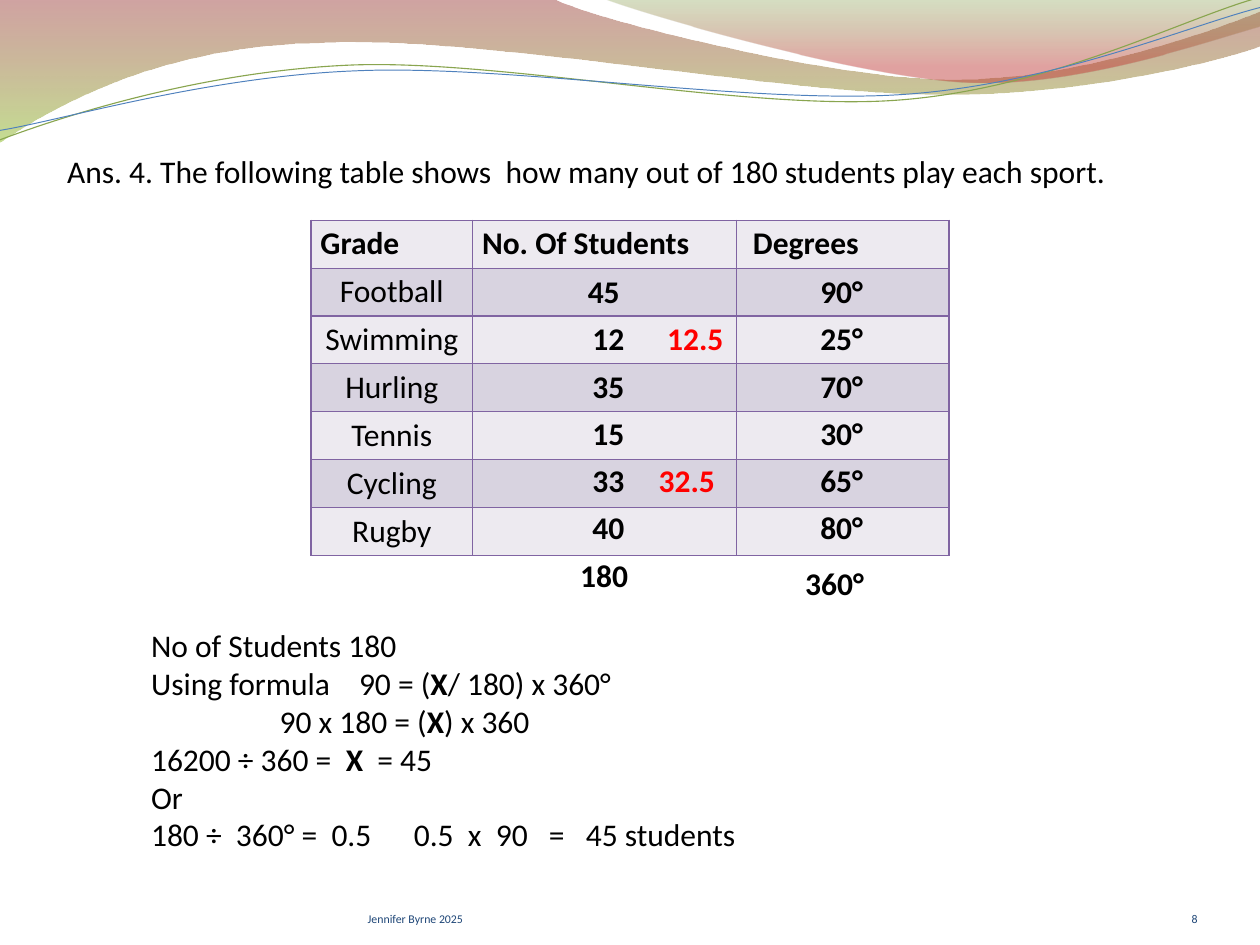
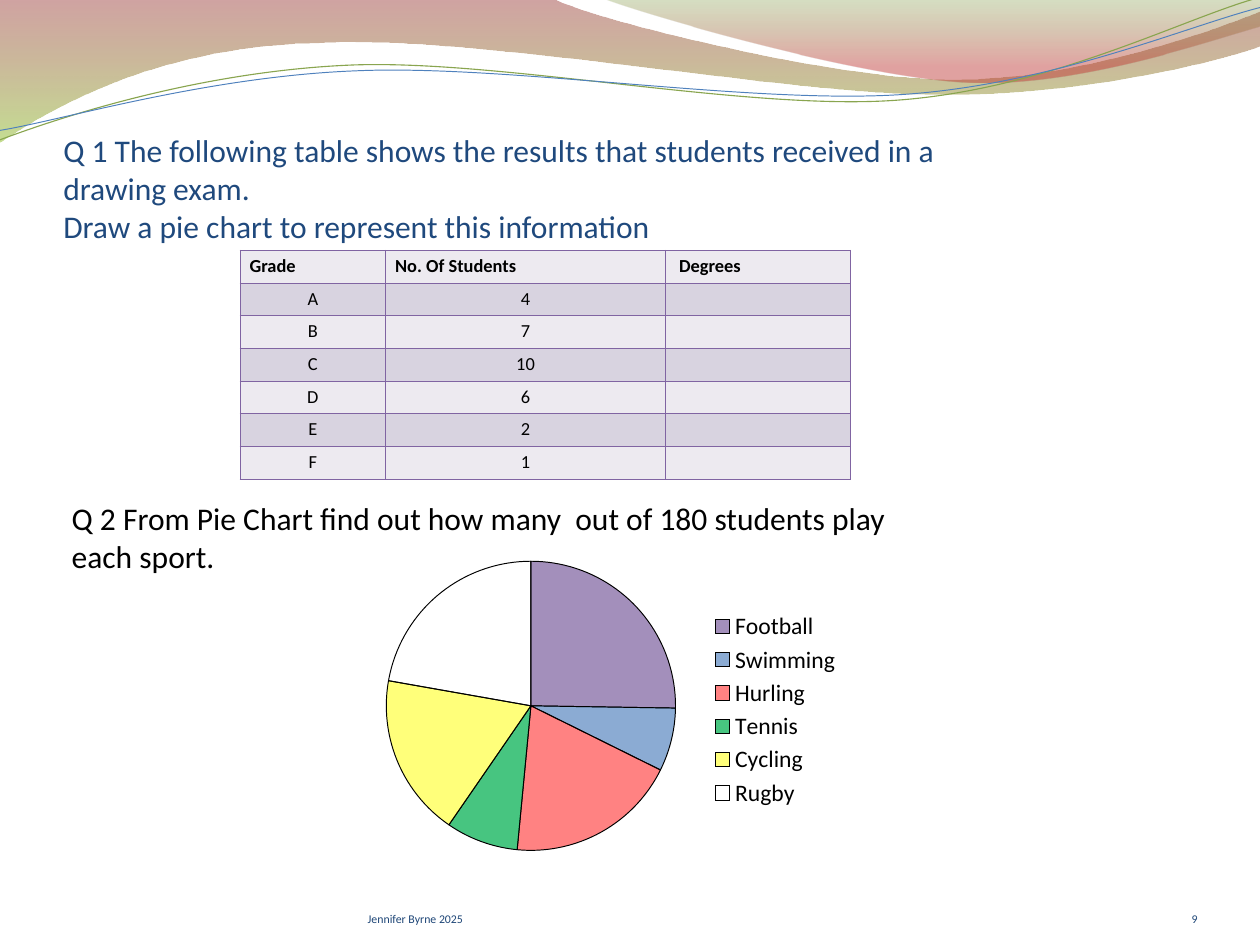
from dataclasses import dataclass

from lxml import etree
from pptx import Presentation
from pptx import util as u
from pptx.chart.data import CategoryChartData
from pptx.dml.color import RGBColor
from pptx.enum import chart as ch, text as tx
from pptx.oxml import ns


@dataclass(frozen=True)
class Theme:
    font: str = "Calibri"
    body: int = 24
    key: int = 18
    small: int = 14
    foot: int = 9
    ink: str = "000000"
    navy: str = "1F497D"
    dim: str = "1E4677"
    red: str = "FF0000"
    edge: str = "8064A2"
    bands: tuple = ("EDEAF0", "D8D3E0")


T = Theme()
WIDE, HIGH = 13.33, 10
LEFT, CENTER, RIGHT = tx.PP_ALIGN.LEFT, tx.PP_ALIGN.CENTER, tx.PP_ALIGN.RIGHT

# Waves: a start point, then points to go to (2 numbers: line, 6: curve).
# Fills list (position, colour, opacity) from top to bottom.
BANDS = [
    ([(0, -.01), (5.87, -.01),
      (6.34, .22, 8.85, .84, 10.11, .84), (11.37, .84, 12.78, .34, 13.33, .12),
      (13.35, .48),
      (13.11, .58, 11.6, 1.01, 9.94, 1), (8.29, 1, 5.09, .37, 3.43, .45),
      (1.72, .47, .61, 1.1, -.01, 1.51), (0, -.01)],
     [(0, "973330", 45), (1, "95C238", 55)]),
    ([(6.39, -.01), (6.79, .15, 9.09, .82, 10.25, .87),
      (11.41, .92, 12.82, .42, 13.33, .28), (13.33, 0), (6.39, -.01)],
     [(0, "769537", 30), (.8, "BE3330", 45)]),
]
LINES = [
    ([(0, 1.48), (.64, 1.24, 2.1, .76, 3.69, .69),
      (5.27, .62, 7.9, 1.18, 9.5, 1.06), (11.11, .94, 12.51, .2, 13.3, -.02)],
     "89A54F", .85),
    ([(0, 1.38), (.63, 1.28, 2.18, .81, 3.77, .75),
      (5.37, .68, 7.96, 1.11, 9.56, 1), (11.15, .89, 12.55, .28, 13.33, .08)],
     "4F81BD", .75),
]

AUTHOR = "Jennifer Byrne 2025"
HEAD = ["Grade", "No. Of Students", " Degrees"]

# Sport, students, exact students where rounded, degrees, pie value, colour, opacity
SPORTS = [
    ("Football", "45", "", "90°", 25, "8064A2", 72),
    ("Swimming", "12", "12.5", "25°", 7, "4F81BD", 66),
    ("Hurling", "35", "", "70°", 19, "FF0000", 49),
    ("Tennis", "15", "", "30°", 8, "00B050", 72),
    ("Cycling", "33", "32.5", "65°", 18, "FFFF00", 52),
    ("Rugby", "40", "", "80°", 22, None, 0),
]
GRADES = [("A", "4"), ("B", "7"), ("C", "10"), ("D", "6"), ("E", "2"), ("F", "1")]

# Bars mark line breaks, asterisks bold; tabs go to the stops, in inches.
ANSWER = ["Ans. 4. The following table shows  how many out of 180 students play each sport."]
EXAM = ["Q 1 The following table shows the results that students received in a drawing exam."
        "|Draw a pie chart to represent this information"]
SURVEY = ["Q 2 From Pie Chart find out how many  out of 180 students play each sport."]
WORK = ["No of Students 180",
        "Using formula\t90 = (*X*/ 180) x 360°",
        "\t90 x 180 = (*X*) x 360|16200 ÷ 360 =  *X*  = 45",
        "Or",
        "180 ÷  360° =  0.5\t0.5  x  90\t=\t45 students"]
STOPS = {1: [2.2], 2: [1.36], 4: [2.78, 4.21, 4.6]}


def rgb(hue):
    return RGBColor.from_string(hue)


def sub(node, tag, **kw):
    return etree.SubElement(node, ns.qn(tag), {k: str(v) for k, v in kw.items()})


def fade(node, share):
    """Set the opacity, in percent, of a colour element."""
    sub(node, "a:alpha", val=share * 1000)


def style(font, size, hue=T.ink, bold=False):
    font.name, font.size, font.bold = T.font, u.Pt(size), bold
    font.color.rgb = rgb(hue)


def fill(para, line):
    """Add the runs and breaks of one marked-up line."""
    for i, row in enumerate(line.split("|")):
        if i:
            para.add_line_break()
        for j, part in enumerate(row.split("*")):
            run = para.add_run()
            run.text = part
            if j % 2:
                run.font.bold = True


def write(slide, box, lines, size=T.body, hue=T.ink, bold=False, align=LEFT,
          low=False, wrap=True, pad=None, stops=None):
    frame = slide.shapes.add_textbox(*map(u.Inches, box)).text_frame
    frame.word_wrap = wrap
    if low:
        frame.vertical_anchor = tx.MSO_ANCHOR.BOTTOM
    else:
        frame.auto_size = tx.MSO_AUTO_SIZE.SHAPE_TO_FIT_TEXT
    if pad is not None:
        frame.margin_left = frame.margin_right = frame.margin_bottom = 0
        frame.margin_top = u.Inches(pad)
    for i, line in enumerate(lines):
        para = frame.paragraphs[0] if i == 0 else frame.add_paragraph()
        para.alignment = align
        if stops and i in stops:
            tabs = sub(para._p.get_or_add_pPr(), "a:tabLst")
            for x in stops[i]:
                sub(tabs, "a:tab", pos=u.Inches(x), algn="l")
        style(para.font, size, hue, bold)
        fill(para, line)


def wave(slide, route, close):
    """Draw a route by its end points, then bend the curved steps."""
    start, *steps = route
    pen = slide.shapes.build_freeform(*map(u.Inches, start))
    pen.add_line_segments([tuple(map(u.Inches, s[-2:])) for s in steps], close=close)
    shape = pen.convert_to_shape()
    shape.shadow.inherit = False
    for node, step in zip(list(shape._element.iter(ns.qn("a:lnTo"))), steps):
        if len(step) == 6:
            bend = etree.Element(ns.qn("a:cubicBezTo"))
            for x, y in zip(step[::2], step[1::2]):
                sub(bend, "a:pt", x=u.Inches(x) - shape.left, y=u.Inches(y) - shape.top)
            node.getparent().replace(node, bend)
    return shape


def adorn(slide):
    """Draw the waves and move them to the layout that all slides share."""
    parts = []
    for route, tones in BANDS:
        shape = wave(slide, route, True)
        shape.line.fill.background()
        shape.fill.gradient()
        shape.fill.gradient_angle = 270
        for stop, (at, hue, _) in zip(shape.fill.gradient_stops, tones):
            stop.position, stop.color.rgb = at, rgb(hue)
        nodes = shape._element.spPr.iter(ns.qn("a:srgbClr"))
        for node, tone in zip(list(nodes), tones):
            fade(node, tone[2])
        parts.append(shape)
    for route, hue, width in LINES:
        shape = wave(slide, route, False)
        shape.fill.background()
        shape.line.color.rgb, shape.line.width = rgb(hue), u.Pt(width)
        parts.append(shape)
    for shape in parts:
        slide.slide_layout.shapes._spTree.append(shape._element)


def sign(slide, num):
    foot = dict(size=T.foot, hue=T.dim, low=True, pad=0)
    write(slide, (3.89, 9.27, 4.89, .53), [AUTHOR], **foot)
    write(slide, (11.56, 9.27, 1.11, .53), [str(num)], align=RIGHT, **foot)


def edge(cell):
    """Draw the four borders of a cell."""
    tc = cell._tc.get_or_add_tcPr()
    for i, side in enumerate("LRTB"):
        line = etree.Element(ns.qn(f"a:ln{side}"), w=str(u.Pt(1)))
        sub(sub(line, "a:solidFill"), "a:srgbClr", val=T.edge)
        tc.insert(i, line)


def grid(slide, at, cols, high, rows, size):
    rows = [HEAD] + rows
    area = (*at, sum(cols), high)
    table = slide.shapes.add_table(len(rows), len(cols), *map(u.Inches, area)).table
    for col, width in zip(table.columns, cols):
        col.width = u.Inches(width)
    for r, words in enumerate(rows):
        table.rows[r].height = u.Inches(high / len(rows))
        for c in range(len(cols)):
            cell = table.cell(r, c)
            cell.fill.solid()
            cell.fill.fore_color.rgb = rgb(T.bands[r % 2])
            edge(cell)
            para = cell.text_frame.paragraphs[0]
            para.alignment = CENTER if r else LEFT
            style(para.font, size, bold=r == 0)
            if c < len(words):
                para.add_run().text = words[c]
            else:
                sub(para._p, "a:endParaRPr", sz=size * 100)


def pie(slide, box):
    data = CategoryChartData()
    data.categories = [s[0] for s in SPORTS]
    data.add_series("Series 1", [s[4] for s in SPORTS])
    chart = slide.shapes.add_chart(ch.XL_CHART_TYPE.PIE, *map(u.Inches, box), data).chart
    chart.has_title, chart.has_legend = False, True
    style(chart.font, T.key)
    chart.legend.position = ch.XL_LEGEND_POSITION.RIGHT
    chart.legend.include_in_layout = False
    plot = chart.plots[0]
    plot.vary_by_categories = True
    for i, (*_, hue, share) in enumerate(SPORTS):
        form = plot.series[0].points[i].format
        if hue:
            form.fill.solid()
            form.fill.fore_color.rgb = rgb(hue)
            fade(form.fill._xPr.find(".//" + ns.qn("a:srgbClr")), share)
        else:
            form.fill.background()
        form.line.color.rgb, form.line.width = rgb(T.ink), u.Pt(.75)
    area = chart._chartSpace.chart.plotArea
    for old in area.findall(ns.qn("c:layout")):
        area.remove(old)
    lay = etree.Element(ns.qn("c:layout"))
    area.insert(0, lay)
    spot = sub(lay, "c:manualLayout")
    for tag, val in [("layoutTarget", "inner"), ("xMode", "edge"), ("yMode", "edge"),
                     ("x", .02), ("y", .115), ("w", .73), ("h", .75)]:
        sub(spot, f"c:{tag}", val=val)


def answers(slide):
    write(slide, (.71, .34, 12, 1.67), ANSWER, low=True, pad=.05)
    top, row = 2.33, .5
    grid(slide, (3.29, top), (1.71, 2.79, 2.25), 3.55, [s[:1] for s in SPORTS], T.body)
    write(slide, (1.5, 6.58, 8.5, 2.52), WORK, stops=STOPS)

    def value(x, y, width, word, hue=T.ink):
        write(slide, (x, y, width, row), [word], hue=hue, bold=True, wrap=False)

    for i, (_, count, exact, angle, *_) in enumerate(SPORTS):
        y = top + row * (i + 1)
        value(6.17 if i else 6.12, y, .54, count)
        value(8.58, y, .66, angle)
        if exact:
            value(6.96 if i == 1 else 6.87, y, .8, exact, T.red)
    value(6.04, 5.83, .71, "180")
    value(8.42, 5.92, .83, "360°")


def tasks(slide):
    write(slide, (.67, 1.57, 10.33, 1.02), EXAM, hue=T.navy, low=True, pad=.05)
    grid(slide, (2.54, 2.65), (1.54, 2.96, 1.96), 2.42, GRADES, T.small)
    write(slide, (.66, 5.23, 9.08, .91), SURVEY)
    pie(slide, (3.5, 5.47, 5.5, 4.08))


def main():
    deck = Presentation()
    deck.slide_width, deck.slide_height = u.Inches(WIDE), u.Inches(HIGH)
    for num, build in enumerate((answers, tasks), 8):
        slide = deck.slides.add_slide(deck.slide_layouts[6])
        if num == 8:
            adorn(slide)
        build(slide)
        sign(slide, num)
    deck.save("out.pptx")


if __name__ == "__main__":
    main()
